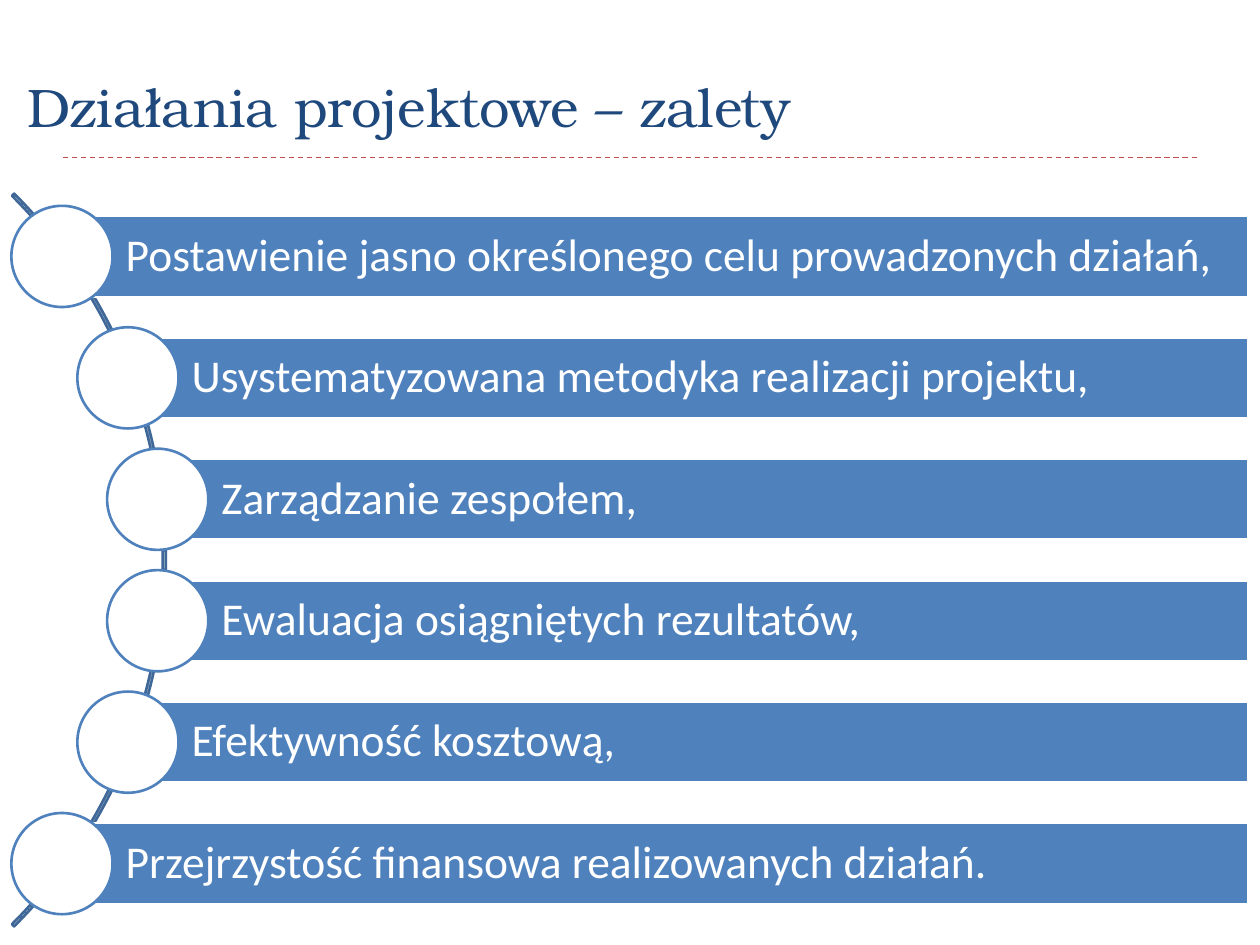
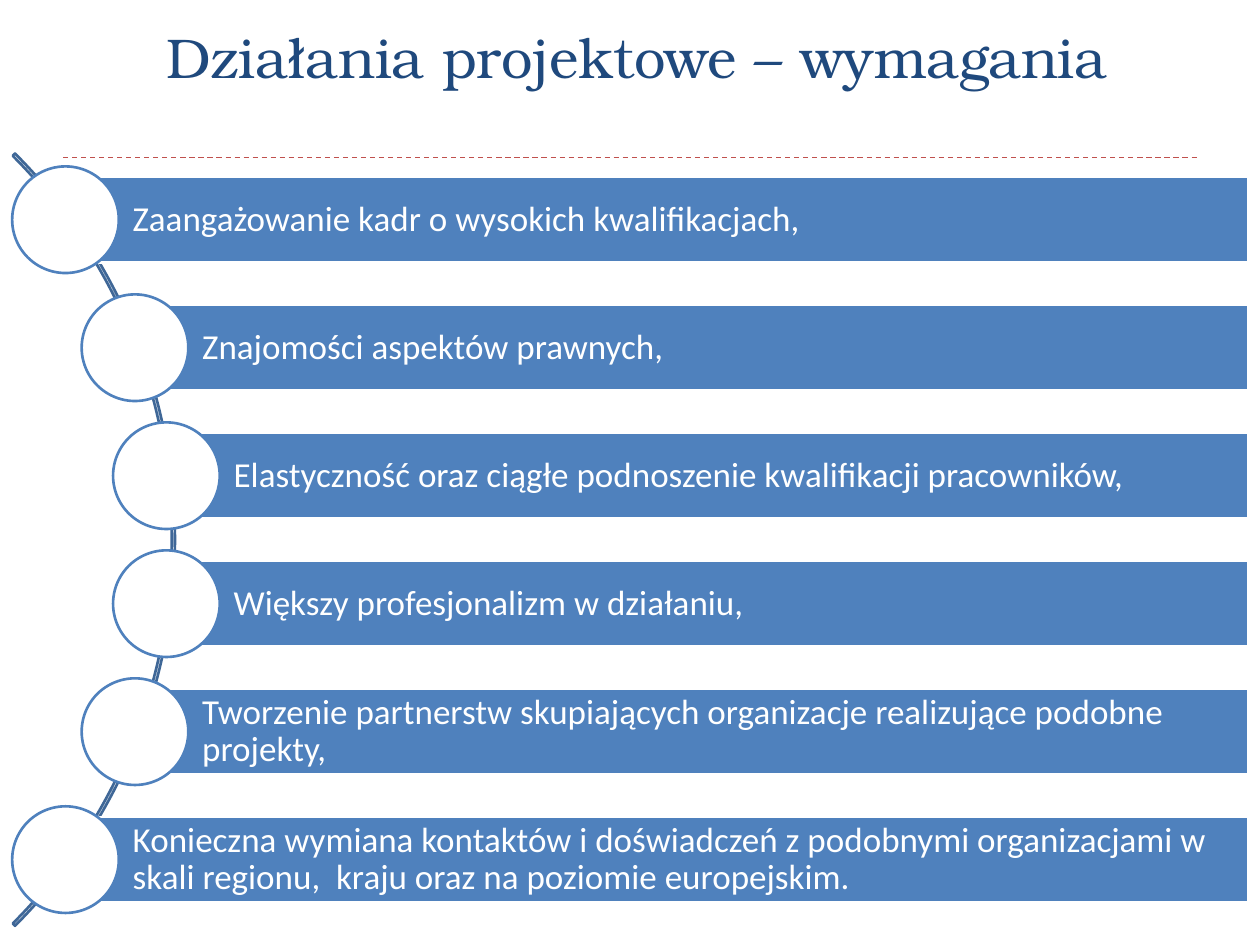
import math

import lxml.etree
import pptx
import pptx.dml.color
import pptx.enum.dml
import pptx.enum.shapes
import pptx.enum.text
import pptx.oxml.ns
import pptx.util

Cm = pptx.util.Cm
Pt = pptx.util.Pt
SHAPES = pptx.enum.shapes.MSO_SHAPE
ALIGN = pptx.enum.text.PP_ALIGN
ANCHOR = pptx.enum.text.MSO_ANCHOR

COLOURS = {
    "title": "1F497D",
    "rule": "C0504D",
    "bar": "4F81BD",
    "arc": "3F6797",
    "white": "FFFFFF",
}
TITLE_FONT = "TeX Gyre Bonum"
BODY_FONT = "Calibri"
TITLE_ONLY_LAYOUT = 5
BAR_RIGHT = 25.17

# Proportions of the curved list, in circle diameters
PITCH = 1.2
BAR_HEIGHT = 0.8
ARC_DIAMETER = 10.24
CENTRES_RADIUS = 5.075
TEXT_INDENT = 0.63

ADVANTAGES = [
    "Postawienie jasno określonego celu prowadzonych działań,",
    "Usystematyzowana metodyka realizacji projektu,",
    "Zarządzanie zespołem,",
    "Ewaluacja osiągniętych rezultatów,",
    "Efektywność kosztową,",
    "Przejrzystość finansowa realizowanych działań.",
]
REQUIREMENTS = [
    "Zaangażowanie kadr o wysokich kwalifikacjach,",
    "Znajomości aspektów prawnych,",
    "Elastyczność oraz ciągłe podnoszenie kwalifikacji pracowników,",
    "Większy profesjonalizm w działaniu,",
    "Tworzenie partnerstw skupiających organizacje realizujące podobne projekty,",
    "Konieczna wymiana kontaktów i doświadczeń z podobnymi organizacjami w "
    "skali regionu,  kraju oraz na poziomie europejskim.",
]


def colour(name):
    return pptx.dml.color.RGBColor.from_string(COLOURS[name])


def format_text(text_frame, font_name, size, colour_name, alignment):
    for paragraph in text_frame.paragraphs:
        paragraph.alignment = alignment
        for run in paragraph.runs:
            run.font.name = font_name
            run.font.size = Pt(size)
            run.font.color.rgb = colour(colour_name)


def add_title(slide, text, box, size, alignment):
    title = slide.shapes.title
    title.left, title.top, title.width, title.height = map(Cm, box)
    text_frame = title.text_frame
    text_frame.text = text
    text_frame.auto_size = pptx.enum.text.MSO_AUTO_SIZE.NONE
    text_frame.vertical_anchor = ANCHOR.BOTTOM
    format_text(text_frame, TITLE_FONT, size, "title", alignment)


def add_title_rule(slide):
    rule = slide.shapes.add_connector(
        pptx.enum.shapes.MSO_CONNECTOR.STRAIGHT,
        Cm(1.27), Cm(3.18), Cm(24.13), Cm(3.18))
    rule.line.color.rgb = colour("rule")
    rule.line.width = Pt(0.75)
    rule.line.dash_style = pptx.enum.dml.MSO_LINE.DASH
    lxml.etree.SubElement(rule.element.spPr, pptx.oxml.ns.qn("a:effectLst"))


def add_outlined(slide, kind, left, top, width, height, line, fill=None):
    shape = slide.shapes.add_shape(kind, Cm(left), Cm(top), Cm(width), Cm(height))
    shape.shadow.inherit = False
    if fill:
        shape.fill.solid()
        shape.fill.fore_color.rgb = colour(fill)
    else:
        shape.fill.background()
    shape.line.color.rgb = colour(line)
    shape.line.width = Pt(1.5)
    return shape


def add_arc(slide, centre_x, centre_y, diameter):
    arc = add_outlined(slide, SHAPES.BLOCK_ARC, centre_x - diameter / 2,
                       centre_y - diameter / 2, diameter, diameter, "arc")
    # From 315 to 45 degrees, then the thickness of the band
    for index, value in enumerate((189, 27, 0.003)):
        arc.adjustments[index] = value


def add_bar(slide, text, left, centre_y, circle, size):
    height = BAR_HEIGHT * circle
    bar = add_outlined(slide, SHAPES.RECTANGLE, left, centre_y - height / 2,
                       BAR_RIGHT - left, height, "white", "bar")
    text_frame = bar.text_frame
    text_frame.text = text
    text_frame.word_wrap = True
    text_frame.vertical_anchor = ANCHOR.MIDDLE
    text_frame.margin_left = Cm(TEXT_INDENT * circle)
    text_frame.margin_top = text_frame.margin_right = text_frame.margin_bottom = Cm(0.16)
    text_frame.paragraphs[0].line_spacing = 0.9
    format_text(text_frame, BODY_FONT, size, "white", ALIGN.LEFT)


def add_curved_list(slide, items, arc_x, arc_y, circle, size):
    """Bars that start at circles spread evenly in height along an arc."""
    add_arc(slide, arc_x, arc_y, ARC_DIAMETER * circle)
    for index, text in enumerate(items):
        offset = (index - (len(items) - 1) / 2) * PITCH * circle
        x = arc_x + math.sqrt((CENTRES_RADIUS * circle) ** 2 - offset ** 2)
        y = arc_y + offset
        add_bar(slide, text, x, y, circle, size)
        add_outlined(slide, SHAPES.OVAL, x - circle / 2, y - circle / 2,
                     circle, circle, "bar", "white")


def add_list_slide(presentation):
    slide = presentation.slides.add_slide(presentation.slide_layouts[TITLE_ONLY_LAYOUT])
    add_title_rule(slide)
    return slide


def main():
    presentation = pptx.Presentation()
    presentation.slide_width = Cm(25.4)
    presentation.slide_height = Cm(19.05)

    slide = add_list_slide(presentation)
    add_title(slide, "Działania projektowe – zalety",
              (0.3, 0.33, 23.83, 2.59), 31, ALIGN.LEFT)
    add_curved_list(slide, ADVANTAGES, arc_x=-7.1, arc_y=11.29, circle=2.04, size=26)

    slide = add_list_slide(presentation)
    add_title(slide, "Działania projektowe – wymagania",
              (0.3, 0, 25.1, 1.93), 32, ALIGN.CENTER)
    add_curved_list(slide, REQUIREMENTS, arc_x=-7.48, arc_y=10.88, circle=2.15, size=20)

    presentation.save("out.pptx")


if __name__ == "__main__":
    main()
